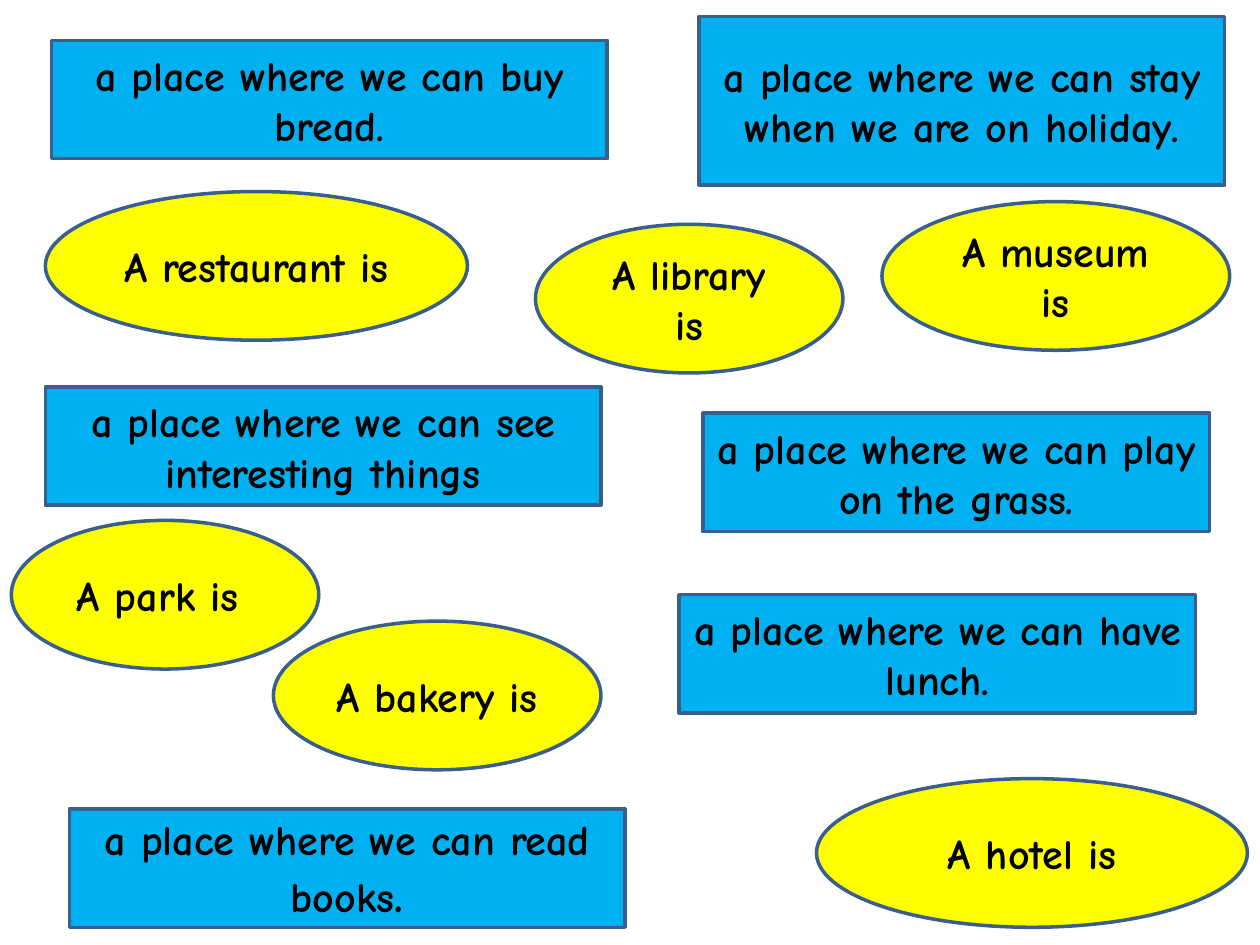
from pptx import Presentation
from pptx.dml.color import RGBColor
from pptx.enum.shapes import MSO_SHAPE as Kind
from pptx.enum.text import MSO_ANCHOR as Anchor, PP_ALIGN as Align
from pptx.util import Inches, Pt

COLS, ROWS = 100, 75
BLUE, YELLOW, EDGE, INK = "00B0F0", "FFFF00", "3A5F8C", "000000"
FONT, SIZE = "Comic Neue", 24
CARD_H, OVAL_H = 9.4, 11.8

# Left, top, width and height in grid units, then the text runs
CARDS = [
    ((4.1, 3.2, 44.1, CARD_H), ["a place where we can buy bread."]),
    ((55.5, 1.3, 41.7, 13.4),
     ["a place where we can stay when we are on holiday."]),
    ((3.6, 30.7, 44.1, CARD_H),
     ["a place where we can see interesting things"]),
    ((55.8, 32.8, 40.2, CARD_H), ["a place where we can play on the grass."]),
    ((53.9, 47.2, 41, CARD_H), ["a place where we can have lunch."]),
    ((5.5, 64.2, 44.1, CARD_H), ["a place where we can read books", "."]),
]
# Left, top and width in grid units, then the text
OVALS = [
    (3.6, 15.2, 33.5, "A restaurant is"),
    (42.5, 17.8, 24.4, "A library is"),
    (70, 16, 27.6, "A museum is"),
    (0.9, 41.3, 24.4, "A park is "),
    (21.7, 49.3, 26, "A bakery is"),
    (64.8, 61.8, 34.2, "A hotel is"),
]


def color(code):
    return RGBColor.from_string(code)


def label(slide, unit, kind, box, fill, runs):
    """Add a filled shape with centred bold text; return its runs."""
    shape = slide.shapes.add_shape(kind, *(round(n * unit) for n in box))
    shape.shadow.inherit = False
    shape.fill.solid()
    shape.fill.fore_color.rgb = color(fill)
    shape.line.color.rgb = color(EDGE)
    shape.line.width = Pt(2)
    frame = shape.text_frame
    frame.word_wrap = True
    frame.vertical_anchor = Anchor.MIDDLE
    para = frame.paragraphs[0]
    para.alignment = Align.CENTER
    font = para.font
    font.name, font.size, font.bold = FONT, Pt(SIZE), True
    font.color.rgb = color(INK)
    for text in runs:
        para.add_run().text = text
    return para.runs


def main():
    deck = Presentation()
    deck.slide_width, deck.slide_height = Inches(10), Inches(7.5)
    unit = deck.slide_width / COLS  # equals slide height / ROWS
    slide = deck.slides.add_slide(deck.slide_layouts[6])

    # Definitions
    for box, texts in CARDS:
        runs = label(slide, unit, Kind.RECTANGLE, box, BLUE, texts)
        for stop in runs[1:]:
            stop.font.size = Pt(28)

    # Places
    for left, top, width, text in OVALS:
        label(slide, unit, Kind.OVAL, (left, top, width, OVAL_H),
              YELLOW, [text])

    deck.save("out.pptx")


if __name__ == "__main__":
    main()
